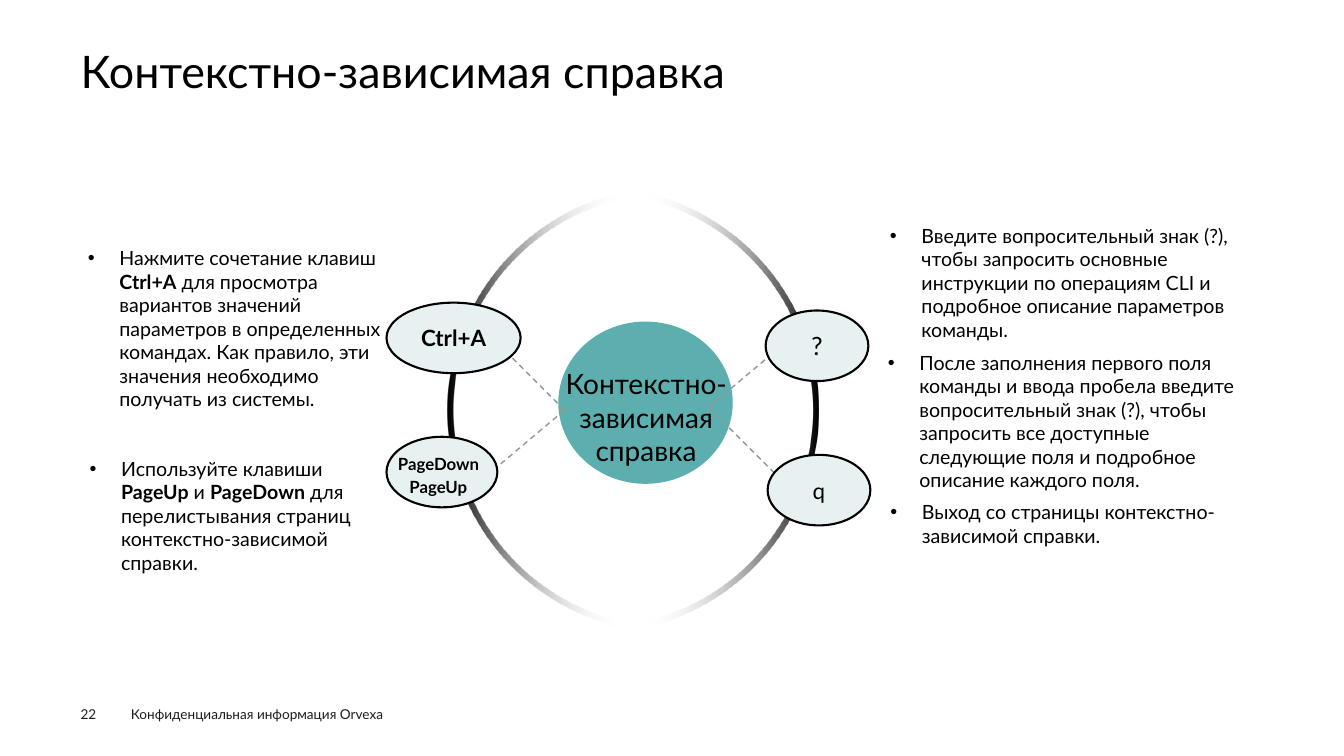
from lxml.etree import SubElement
from pptx import Presentation
from pptx.dml.color import RGBColor
from pptx.enum.dml import MSO_LINE
from pptx.enum.shapes import MSO_CONNECTOR, MSO_SHAPE
from pptx.enum.text import MSO_ANCHOR, PP_ALIGN
from pptx.oxml.ns import qn
from pptx.util import Pt

FONT = "Lato"
BLACK, WHITE, DARK, GREY = "000000", "FFFFFF", "1D1D1B", "969696"
TEAL, PALE = "5DAEAE", "E8F1F1"

TITLE = ("Контекстно-зависимая справка", (57.6, 35.3, 844.6, 38.9))
FOOTER = ("Конфиденциальная информация Orvexa", (86.4, 500.4, 247.7, 18.7))
NUMBER = ("22", (57.6, 504, 39.6, 11.5))

DISC = (398.8, 229.7, 124.6, 115.9)
HUB = ("Контекстно-зависимая справка", (392.8, 258.4, 137.5, 94))

# Left edge and rotation of each half ring
RINGS = [(266.4, 90), (319.7, 270)]
RING_TOP, RING_SIZE, RING_BAND = 133.9, 318.2, 4.3

# Start point, then the end points of its two spokes
SPOKES = [
    ((506.2, 290.9), [(560.9, 244.8), (560.9, 345.6)]),
    ((403.2, 293), [(348.5, 339.1), (348.5, 238.3)]),
]

# Text, left, top, width, size, bold
KEY_H = 50.4
KEYS = [
    ("Ctrl+A", 276.1, 216.2, 95.8, 16, True),
    ("q", 548.3, 324.9, 73.4, 16, False),
    ("", 276.1, 312, 79.2, 12, True),
    ("?", 546.9, 221.8, 73.4, 18, False),
]
PAGES = [
    ("PageDown", (277.2, 320.4, 80.6, 21.6)),
    ("PageUp", (285.4, 337, 69.8, 21.6)),
]

# Runs alternate between plain and bold
NOTES = [
    (["Введите вопросительный знак (?), чтобы запросить основные инструкции "
      "по операциям CLI и подробное описание параметров команды."],
     (628.6, 156.2, 274.3, 104.4)),
    (["После заполнения первого поля команды и ввода пробела введите "
      "вопросительный знак (?), чтобы запросить все доступные следующие поля "
      "и подробное описание каждого поля."],
     (627.1, 246.9, 275, 123.8)),
    (["Выход со страницы контекстно-зависимой справки."],
     (628.9, 353.5, 273.6, 46)),
    (["Нажмите сочетание клавиш ", "Ctrl+A",
      " для просмотра вариантов значений параметров в определенных командах. "
      "Как правило, эти значения необходимо получать из системы."],
     (55.7, 172.1, 239, 123.8)),
    (["Используйте клавиши ", "PageUp", " и ", "PageDown",
      " для перелистывания страниц контекстно-зависимой справки."],
     (56.9, 322.6, 226.8, 65.5)),
]
INDENT = 22.5


def color(text):
    return RGBColor.from_string(text)


def points(nums):
    return [Pt(n) for n in nums]


def style(font, size, tint=BLACK, bold=False):
    for name, value in {"name": FONT, "size": Pt(size), "bold": bold}.items():
        setattr(font, name, value)
    font.color.rgb = color(tint)


def label(slide, text, box, size, tint=BLACK, bold=False, inset=True, **form):
    """Add a text box; form holds paragraph attributes. A list gives runs."""
    frame = slide.shapes.add_textbox(*points(box)).text_frame
    frame.word_wrap = True
    if not inset:
        for side in ("left", "top", "right", "bottom"):
            setattr(frame, f"margin_{side}", 0)
    para = frame.paragraphs[0]
    for name, value in form.items():
        setattr(para, name, value)
    for i, part in enumerate([text] if isinstance(text, str) else text):
        run = para.add_run()
        run.text = part
        style(run.font, size, tint, bold or i % 2 == 1)
    return para


def note(slide, parts, box):
    para = label(slide, parts, box, 14)
    props = para._p.get_or_add_pPr()
    props.set("marL", str(Pt(INDENT)))
    props.set("indent", str(-Pt(INDENT)))
    SubElement(props, qn("a:buFont")).set("typeface", "Arial")
    SubElement(props, qn("a:buChar")).set("char", "•")


def preset(slide, kind, box):
    shape = slide.shapes.add_shape(kind, *points(box))
    shape.shadow.inherit = False
    shape.line.fill.background()
    return shape


def oval(slide, box, fill):
    shape = preset(slide, MSO_SHAPE.OVAL, box)
    shape.fill.solid()
    shape.fill.fore_color.rgb = color(fill)
    return shape


def key(slide, text, left, top, width, size, bold):
    shape = oval(slide, (left, top, width, KEY_H), PALE)
    shape.line.color.rgb = color(BLACK)
    shape.line.width = Pt(1.5)
    if text:
        frame = shape.text_frame
        frame.vertical_anchor = MSO_ANCHOR.MIDDLE
        para = frame.paragraphs[0]
        para.alignment = PP_ALIGN.CENTER
        run = para.add_run()
        run.text = text
        style(run.font, size, BLACK, bold)


def ring(slide, left, turn):
    """Draw a thin half ring that fades out towards its two tips."""
    box = (left, RING_TOP, RING_SIZE, RING_SIZE)
    shape = preset(slide, MSO_SHAPE.BLOCK_ARC, box)
    shape.adjustments[2] = RING_BAND / RING_SIZE
    shape.rotation = turn
    shape.fill.gradient()
    shape.fill.gradient_angle = 270
    stops = shape.fill.gradient_stops
    for stop, tint, place in zip(stops, (BLACK, WHITE), (0, 0.39)):
        stop.color.rgb = color(tint)
        stop.position = place
    clear = list(shape._element.spPr.iter(qn("a:srgbClr")))[-1]
    SubElement(clear, qn("a:alpha")).set("val", "0")


def spoke(slide, start, end):
    line = slide.shapes.add_connector(
        MSO_CONNECTOR.STRAIGHT, *points(start + end))
    line.line.color.rgb = color(GREY)
    line.line.width = Pt(1)
    line.line.dash_style = MSO_LINE.DASH
    SubElement(line._element.spPr, qn("a:effectLst"))


def main():
    deck = Presentation()
    deck.slide_width, deck.slide_height = Pt(960), Pt(540)
    slide = deck.slides.add_slide(deck.slide_layouts[6])

    label(slide, *FOOTER, 9.7, DARK)
    label(slide, *NUMBER, 9.7, DARK, inset=False)
    label(slide, *TITLE, 32, inset=False, line_spacing=0.9)

    oval(slide, DISC, TEAL)
    for item in RINGS:
        ring(slide, *item)
    for start, ends in SPOKES:
        for end in ends:
            spoke(slide, start, end)
    label(slide, *HUB, 20, alignment=PP_ALIGN.CENTER)
    for item in KEYS:
        key(slide, *item)
    for text, box in PAGES:
        label(slide, text, box, 12, bold=True)
    for parts, box in NOTES:
        note(slide, parts, box)

    deck.save("out.pptx")


if __name__ == "__main__":
    main()
